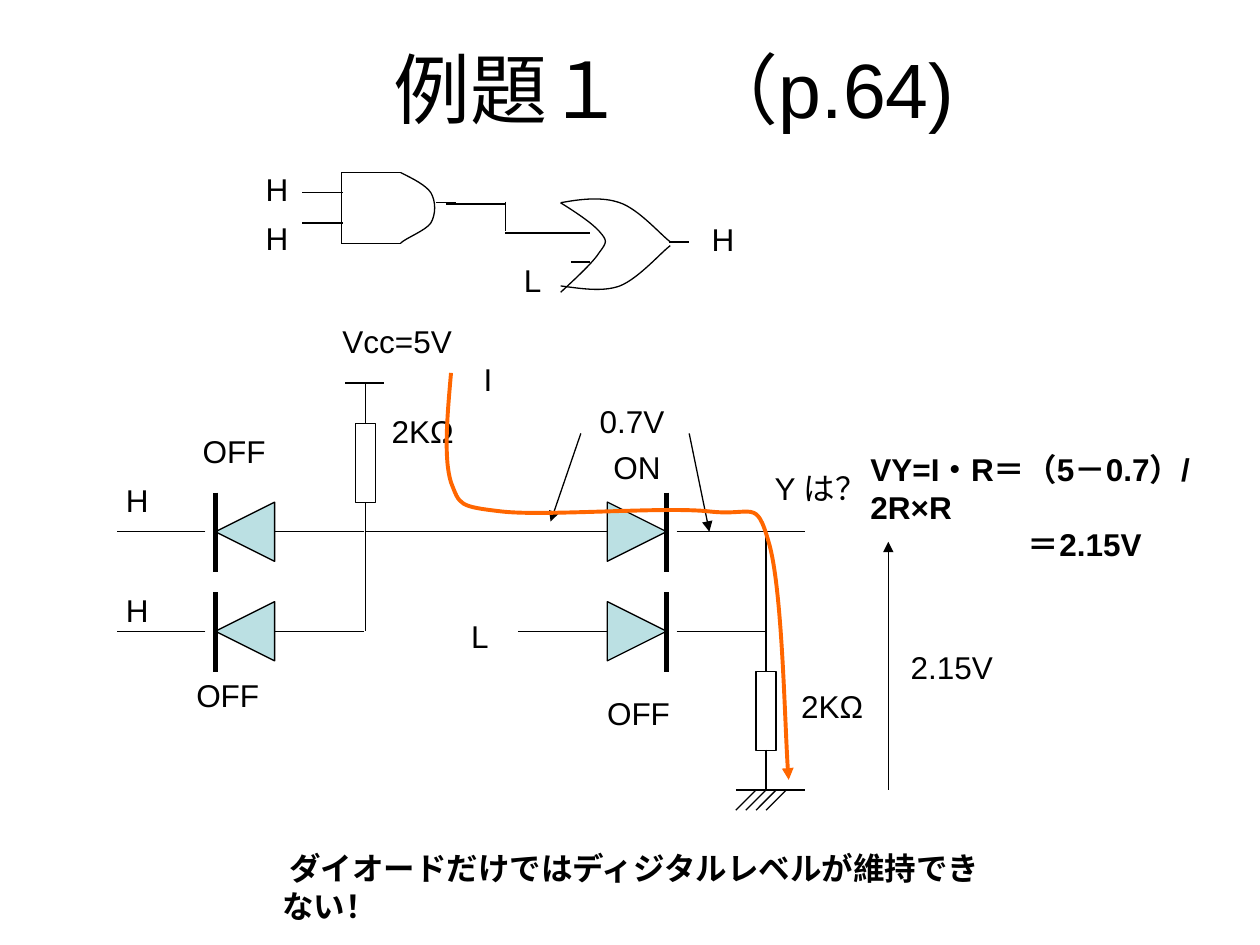
from dataclasses import dataclass
from typing import NamedTuple

from lxml.etree import SubElement
from pptx import Presentation
from pptx.dml.color import RGBColor
from pptx.enum.shapes import MSO_CONNECTOR as Conn, MSO_SHAPE as Shape
from pptx.enum.text import MSO_ANCHOR as Anchor, MSO_AUTO_SIZE as AutoSize, PP_ALIGN as Align
from pptx.oxml.ns import qn
from pptx.util import Emu, Inches, Pt

BLACK = RGBColor(0x00, 0x00, 0x00)
ORANGE = RGBColor(0xFF, 0x66, 0x00)
PALE_TEAL = RGBColor(0xBB, 0xE0, 0xE3)
FONT = "Arial"
WIDTH, HEIGHT = Inches(10), Inches(7.5)
COLUMNS = 1000
CELL = WIDTH // COLUMNS
THIN, CURRENT, BAR = 0.75, 2.25, 3
UPPER, LOWER = 422, 501
SUPPLY_X, OUTPUT_X, GROUND_Y = 290, 608, 627
TRIANGLE = 47


class Wire(NamedTuple):
    x1: int
    y1: int
    x2: int
    y2: int
    arrow: bool = False


class Diode(NamedTuple):
    bar_x: int
    y: int
    direction: int


class Resistor(NamedTuple):
    x: int
    top: int


class Run(NamedTuple):
    text: str
    bold: bool = False


class Line(NamedTuple):
    runs: list[Run]
    indent: int = 0


class Label(NamedTuple):
    x: int
    y: int
    w: int
    lines: list[Line]
    h: int = 40


@dataclass
class Curve:
    points: list[tuple[int, int]]
    color: RGBColor = BLACK
    weight: float = THIN
    arrow: bool = False


def word(x: int, y: int, w: int, text: str) -> Label:
    return Label(x, y, w, [Line([Run(text)])])


DIODES = [Diode(x, y, d) for x, d in ((529, 1), (171, -1)) for y in (UPPER, LOWER)]
RESISTORS = [Resistor(OUTPUT_X, 533), Resistor(SUPPLY_X, 336)]
CIRCUIT_WIRES = [
    Wire(OUTPUT_X, UPPER, OUTPUT_X, 533),
    Wire(OUTPUT_X, UPPER, 639, UPPER),
    Wire(OUTPUT_X, 595, OUTPUT_X, GROUND_Y),
    Wire(584, GROUND_Y, 639, GROUND_Y),
    Wire(274, 304, 305, 304),
    Wire(SUPPLY_X, 304, SUPPLY_X, 336),
    Wire(SUPPLY_X, 399, SUPPLY_X, LOWER),
    Wire(SUPPLY_X, UPPER, 413, UPPER),
]
GROUND_HATCH = [Wire(x, GROUND_Y, x - 16, GROUND_Y + 16) for x in range(600, 625, 8)]
ARROWS = [
    Wire(461, 344, 437, 414, True),
    Wire(547, 344, 563, 422, True),
    Wire(705, GROUND_Y, 705, 430, True),
]
GATE_WIRES = [
    Wire(271, 137, 318, 137),
    Wire(271, 193, 318, 193),
    Wire(271, 137, 271, 193),
    Wire(240, 153, 272, 153),
    Wire(240, 177, 272, 177),
    Wire(346, 161, 362, 161),
    Wire(354, 162, 401, 162),
    Wire(401, 160, 401, 183),
    Wire(401, 185, 456, 185),
    Wire(453, 185, 468, 185),
    Wire(453, 208, 468, 208),
    Wire(531, 192, 547, 192),
]
GATE_CURVES = [
    Curve([(318, 137), (328, 142), (338, 147), (342, 153), (346, 160),
           (346, 170), (342, 177), (338, 183), (322, 189), (318, 193)]),
    Curve([(445, 161), (461, 158), (478, 156), (492, 161), (507, 166), (525, 187), (532, 192)]),
    Curve([(445, 227), (461, 229), (478, 232), (492, 227), (507, 221), (525, 200), (532, 195)]),
    Curve([(445, 161), (458, 169), (471, 178), (476, 184), (482, 191),
           (482, 192), (476, 200), (471, 208), (458, 220), (445, 232)]),
]
CURRENT_PATH = Curve(
    [(358, 296), (355, 330), (352, 364), (358, 383), (365, 401), (364, 402),
     (398, 406), (432, 410), (528, 402), (563, 406), (598, 410), (600, 395),
     (610, 430), (621, 466), (623, 588), (626, 619)],
    ORANGE, CURRENT, True)
LABELS = [
    word(605, 367, 94, "Y は？"),
    word(364, 485, 34, "L"),
    word(477, 351, 58, "ON"),
    word(472, 546, 70, "OFF"),
    word(262, 251, 107, "Vcc=5V"),
    word(151, 338, 70, "OFF"),
    word(146, 532, 70, "OFF"),
    word(90, 377, 38, "H"),
    word(90, 464, 38, "H"),
    word(301, 322, 70, "2KΩ"),
    word(626, 540, 70, "2KΩ"),
    word(374, 281, 27, "I"),
    word(466, 314, 72, "0.7V"),
    word(713, 509, 86, "2.15V"),
    word(201, 130, 38, "H"),
    word(201, 169, 38, "H"),
    word(555, 170, 38, "H"),
    word(406, 202, 34, "L"),
    Label(681, 352, 318, [Line([Run("VY=I・R＝（5－0.7）/2R×R", True)]),
                          Line([Run("＝2.15V", True)], 125)], 71),
    Label(214, 669, 597, [Line([Run(" "),
                                Run("ダイオードだけではディジタルレベルが維持できない！", True)])]),
]


def cells(*values: float) -> list[Emu]:
    return [Emu(round(v * CELL)) for v in values]


def style_line(sp, color: RGBColor, weight: float, arrow: bool = False) -> None:
    sp.line.color.rgb = color
    sp.line.width = Pt(weight)
    if arrow:
        SubElement(sp.line._get_or_add_ln(), qn("a:tailEnd"), type="triangle")


def draw_wire(shapes, wire: Wire, weight: float = THIN) -> None:
    sp = shapes.add_connector(Conn.STRAIGHT, *cells(*wire[:4]))
    style_line(sp, BLACK, weight, wire.arrow)
    SubElement(sp.element.spPr, qn("a:effectLst"))


def draw_diode(shapes, diode: Diode) -> None:
    x, y, d = diode
    left = x - TRIANGLE if d > 0 else x
    sp = shapes.add_shape(Shape.ISOSCELES_TRIANGLE,
                          *cells(left, y - TRIANGLE / 2, TRIANGLE, TRIANGLE))
    sp.rotation = 90 * d % 360
    sp.shadow.inherit = False
    sp.fill.solid()
    sp.fill.fore_color.rgb = PALE_TEAL
    style_line(sp, BLACK, THIN)
    draw_wire(shapes, Wire(x, y - 31, x, y + 32), BAR)
    for start, end in ((-118, -47), (8, 78)):
        draw_wire(shapes, Wire(x + d * start, y, x + d * end, y))


def draw_resistor(shapes, resistor: Resistor) -> None:
    sp = shapes.add_shape(Shape.RECTANGLE, *cells(resistor.x - 8, resistor.top, 16, 63))
    sp.shadow.inherit = False
    sp.fill.background()
    style_line(sp, BLACK, THIN)


def draw_curve(shapes, curve: Curve) -> None:
    start, *rest = curve.points
    builder = shapes.build_freeform(*start, scale=CELL)
    builder.add_line_segments(rest, close=False)
    sp = builder.convert_to_shape()
    sp.shadow.inherit = False
    sp.fill.background()
    style_line(sp, curve.color, curve.weight, curve.arrow)
    outline = next(sp.element.iter(qn("a:path")))
    segments = outline.findall(qn("a:lnTo"))
    for i in range(0, len(segments), 3):
        bezier = SubElement(outline, qn("a:cubicBezTo"))
        for segment in segments[i:i + 3]:
            bezier.append(segment[0])
            outline.remove(segment)


def add_run(p, run: Run, size: float) -> None:
    r = p.add_run()
    r.text = run.text
    r.font.name, r.font.size, r.font.bold = FONT, Pt(size), run.bold
    r.font.color.rgb = BLACK


def draw_label(shapes, label: Label) -> None:
    tf = shapes.add_textbox(*cells(label.x, label.y, label.w, label.h)).text_frame
    tf.word_wrap = False
    tf.auto_size = AutoSize.SHAPE_TO_FIT_TEXT
    for i, line in enumerate(label.lines):
        p = tf.add_paragraph() if i else tf.paragraphs[0]
        if line.indent:
            p._p.get_or_add_pPr().set("marL", str(line.indent * CELL))
        for run in line.runs:
            add_run(p, run, 18)


def draw_title(title) -> None:
    title.left, title.top, title.width, title.height = cells(85, 7, 900, 125)
    tf = title.text_frame
    tf.auto_size = AutoSize.NONE
    tf.vertical_anchor = Anchor.MIDDLE
    p = tf.paragraphs[0]
    p.alignment = Align.CENTER
    add_run(p, Run("例題１　（p.64)"), 44)


def main() -> None:
    prs = Presentation()
    prs.slide_width, prs.slide_height = WIDTH, HEIGHT
    s = prs.slides.add_slide(prs.slide_layouts[5])
    draw_title(s.shapes.title)
    for draw, items in (
        (draw_diode, DIODES),
        (draw_resistor, RESISTORS),
        (draw_wire, CIRCUIT_WIRES + GROUND_HATCH + ARROWS + GATE_WIRES),
        (draw_curve, GATE_CURVES),
        (draw_label, LABELS),
        (draw_curve, [CURRENT_PATH]),
    ):
        for item in items:
            draw(s.shapes, item)
    prs.save("out.pptx")


if __name__ == "__main__":
    main()
